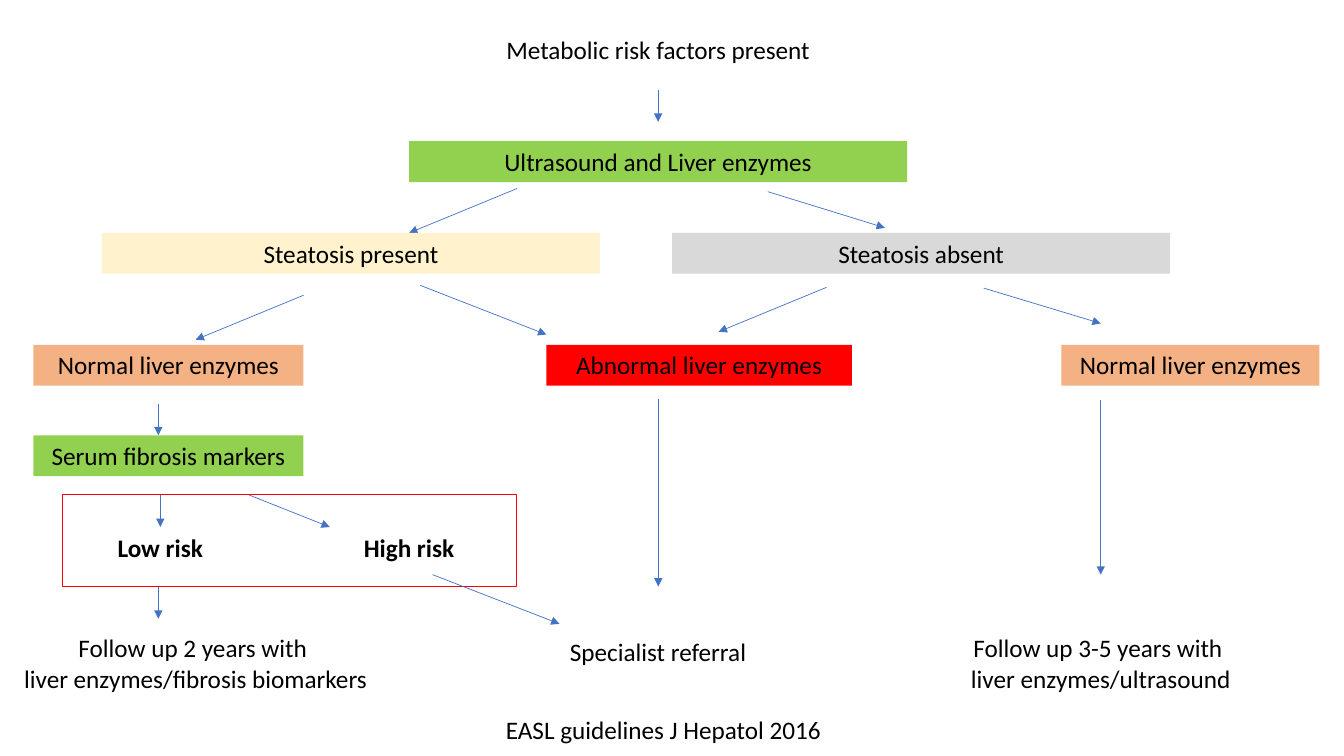
from dataclasses import dataclass

from lxml.etree import SubElement
from pptx import Presentation
from pptx.dml.color import RGBColor
from pptx.enum.shapes import MSO_CONNECTOR as Connector, MSO_SHAPE as Shape
from pptx.enum.text import MSO_ANCHOR as Anchor, MSO_AUTO_SIZE as AutoSize, PP_ALIGN as Align
from pptx.oxml.ns import qn
from pptx.util import Cm, Pt


@dataclass(frozen=True)
class Theme:
    """Colours, type and standard measures of the flowchart."""
    font: str = "Calibri"
    size: int = 18
    text: str = "000000"
    test: str = "92D050"
    present: str = "FFF2CC"
    absent: str = "D9D9D9"
    normal: str = "F4B183"
    alert: str = "FF0000"
    arrow: str = "4472C4"
    arrow_width: float = 0.5
    frame_width: float = 0.75
    wide: float = 12.55
    narrow: float = 6.81
    row: float = 1.03


@dataclass(frozen=True)
class Box:
    """A rectangle in centimetres."""
    left: float
    top: float
    width: float
    height: float = Theme.row

    def inner(self, left, top, width, height=Theme.row):
        """Return a box given relative to this one."""
        return Box(self.left + left, self.top + top, width, height)

    def lengths(self):
        """Return the four lengths that a shape needs."""
        return [Cm(n) for n in (self.left, self.top, self.width, self.height)]


THEME = Theme()


def add_text(page, box, text, fill=None, bold=False, align=Align.CENTER):
    """Write text in a plain or filled box, one paragraph a line."""
    if fill:
        shape = page.shapes.add_shape(Shape.RECTANGLE, *box.lengths())
        shape.shadow.inherit = False
        shape.fill.solid()
        shape.fill.fore_color.rgb = RGBColor.from_string(fill)
        shape.line.fill.background()
    else:
        shape = page.shapes.add_textbox(*box.lengths())
    frame = shape.text_frame
    frame.word_wrap = True
    frame.auto_size = AutoSize.SHAPE_TO_FIT_TEXT
    frame.vertical_anchor = Anchor.TOP
    for index, line in enumerate(text.split("\n")):
        para = frame.add_paragraph() if index else frame.paragraphs[0]
        para.alignment = align
        span = para.add_run()
        span.text = line
        span.font.name = THEME.font
        span.font.size = Pt(THEME.size)
        span.font.bold = bold
        span.font.color.rgb = RGBColor.from_string(THEME.text)


def add_arrows(page, box, *routes):
    """Draw arrows along routes given relative to the box."""
    for x1, y1, x2, y2 in routes:
        arrow = page.shapes.add_connector(
            Connector.STRAIGHT,
            Cm(box.left + x1), Cm(box.top + y1), Cm(box.left + x2), Cm(box.top + y2))
        arrow.line.color.rgb = RGBColor.from_string(THEME.arrow)
        arrow.line.width = Pt(THEME.arrow_width)
        SubElement(arrow.line._get_or_add_ln(), qn("a:tailEnd"), type="triangle")
        SubElement(arrow._element.spPr, qn("a:effectLst"))


def add_screening(page, box):
    """Place the entry criterion and the first tests."""
    middle = box.width / 2
    add_text(page, box.inner(0, 0, box.width), "Metabolic risk factors present")
    add_text(page, box.inner(0, 2.82, box.width), "Ultrasound and Liver enzymes", fill=THEME.test)
    add_arrows(page, box, (middle, 1.52, middle, 2.33),
               (2.72, 4.01, 0, 5.13), (9.04, 4.09, 11.99, 5))


def add_steatosis(page, box):
    """Place the two ultrasound findings at the ends of the box."""
    add_text(page, box.inner(0, 0, THEME.wide), "Steatosis present", fill=THEME.present)
    add_text(page, box.inner(box.width - THEME.wide, 0, THEME.wide),
             "Steatosis absent", fill=THEME.absent)
    add_arrows(page, box, (5.08, 1.57, 2.36, 2.69), (8.02, 1.32, 11.2, 2.56),
               (18.26, 1.37, 15.54, 2.49), (22.22, 1.39, 25.17, 2.28))


def add_enzymes(page, box):
    """Place the row of liver enzyme results."""
    results = [(0, THEME.narrow, "Normal", THEME.normal),
               (12.93, 7.7, "Abnormal", THEME.alert),
               (box.width - 6.5, 6.5, "Normal", THEME.normal)]
    for left, width, result, fill in results:
        add_text(page, box.inner(left, 0, width), f"{result} liver enzymes", fill=fill)
    add_arrows(page, box, (3.15, 1.5, 3.15, 2.28),
               (15.75, 1.37, 15.75, 6.09), (26.9, 1.39, 26.9, 5.79))


def add_fibrosis(page, box):
    """Place the fibrosis markers above the framed risk levels."""
    frame = box.inner(0.73, 1.5, box.width - 0.73, box.height - 1.5)
    outline = page.shapes.add_shape(Shape.RECTANGLE, *frame.lengths())
    outline.shadow.inherit = False
    outline.fill.background()
    outline.line.color.rgb = RGBColor.from_string(THEME.alert)
    outline.line.width = Pt(THEME.frame_width)
    add_text(page, box.inner(0, 0, THEME.narrow), "Serum fibrosis markers", fill=THEME.test)
    for centre, risk in ((2.47, "Low risk"), (8.74, "High risk")):
        add_text(page, frame.inner(centre - 2, 0.81, 4), risk, bold=True)
    add_arrows(page, frame, (2.47, 0, 2.47, 0.81), (4.7, 0, 6.74, 0.81),
               (9.33, 2.01, 12.53, 3.25), (2.42, 2.31, 2.42, 3.12))


def add_outcomes(page, box):
    """Place the follow-up paths and the citation."""
    add_text(page, box.inner(0, 0, 9.66, 1.79),
             "Follow up 2 years with \nliver enzymes/fibrosis biomarkers")
    add_text(page, box.inner(10.21, 0.08, THEME.wide), "Specialist referral")
    add_text(page, box.inner(box.width - 12, 0, 12, 1.79),
             "Follow up 3-5 years with \nliver enzymes/ultrasound")
    add_text(page, box.inner(12.4, 2.06, 10.36),
             "EASL guidelines J Hepatol 2016", align=Align.LEFT)


def main():
    """Build the flowchart slide."""
    deck = Presentation()
    deck.slide_width, deck.slide_height = Cm(33.87), Cm(19.05)
    page = deck.slides.add_slide(deck.slide_layouts[6])
    add_screening(page, Box(10.31, 0.74, THEME.wide))
    add_steatosis(page, Box(2.57, 5.87, 26.92))
    add_enzymes(page, Box(0.84, 8.69, 32.41))
    add_fibrosis(page, Box(0.84, 10.97, 12.19, 3.81))
    add_outcomes(page, Box(0.1, 15.82, 33.64))
    deck.save("out.pptx")


if __name__ == "__main__":
    main()
